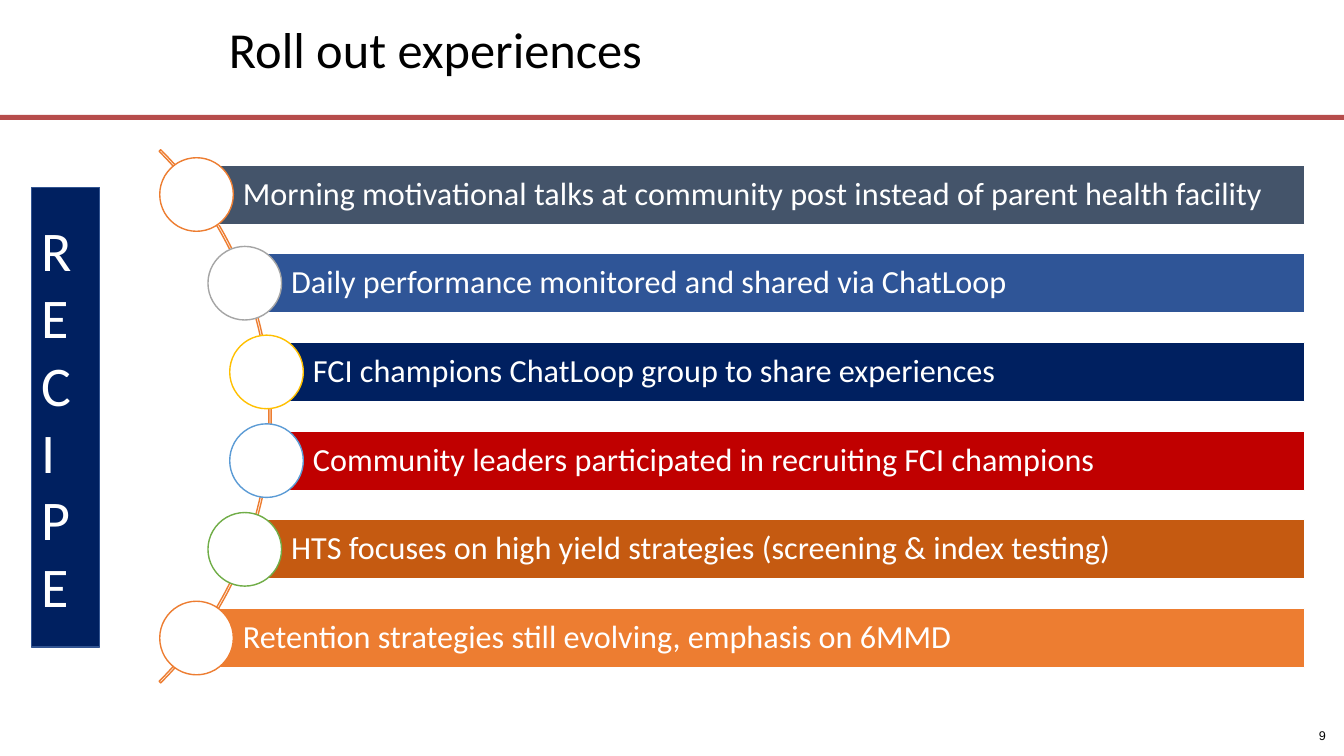
from dataclasses import dataclass
from math import sqrt

from pptx import Presentation
from pptx.dml.color import RGBColor
from pptx.enum.shapes import MSO_SHAPE
from pptx.enum.text import MSO_ANCHOR, PP_ALIGN
from pptx.util import Inches, Pt

TITLE = "Roll out experiences"
SIDE_WORD = "RECIPE"
PAGE_NUMBER = "9"
EXPERIENCES = [
    ("Morning motivational talks at community post instead of parent health facility", "44546A", "ED7D31"),
    ("Daily performance monitored and shared via ChatLoop", "2F5597", "A5A5A5"),
    ("FCI champions ChatLoop group to share experiences", "002060", "FFC000"),
    ("Community leaders participated in recruiting FCI champions", "C00000", "5B9BD5"),
    ("HTS focuses on high yield strategies (screening & index testing)", "C55A11", "70AD47"),
    ("Retention strategies still evolving, emphasis on 6MMD", "ED7D31", "ED7D31"),
]


@dataclass(frozen=True)
class Theme:
    white: str = "FFFFFF"
    black: str = "000000"
    page_text: str = "060606"
    rule: str = "B64C4B"
    arc: str = "ED7D31"
    navy: str = "002060"
    navy_edge: str = "325491"
    font: str = "Calibri"
    page_font: str = "Arial"
    title_size: int = 36
    side_size: int = 40
    bar_size: int = 23
    page_size: int = 9


THEME = Theme()
WIDTH, HEIGHT = 13.33, 7.5
ARC_X, ARC_Y, ARC_RADIUS = -1.05, 4.13, 3.74
CENTRE_RADIUS = 3.72
ROW_PITCH, BAR_HEIGHT, BAR_RIGHT, CIRCLE = 0.88, 0.59, 12.94, 0.73


def add_box(slide, preset, box, fill=None, line=None):
    shape = slide.shapes.add_shape(preset, *map(Inches, box))
    shape.shadow.inherit = False
    if fill:
        shape.fill.solid()
        shape.fill.fore_color.rgb = RGBColor.from_string(fill)
    else:
        shape.fill.background()
    if line:
        shape.line.color.rgb = RGBColor.from_string(line)
        shape.line.width = Pt(1)
    else:
        shape.line.fill.background()
    return shape


def write(shape, lines, size, color, font=THEME.font, align=PP_ALIGN.LEFT, spacing=1.0, **frame_format):
    frame = shape.text_frame
    frame.text = "\n".join(lines)
    for name, value in {"word_wrap": True, "vertical_anchor": MSO_ANCHOR.MIDDLE, **frame_format}.items():
        setattr(frame, name, value)
    for paragraph in frame.paragraphs:
        for name, value in {"alignment": align, "line_spacing": spacing, "space_before": Pt(0)}.items():
            setattr(paragraph, name, value)
        for name, value in {"name": font, "size": Pt(size), "bold": False}.items():
            setattr(paragraph.font, name, value)
        paragraph.font.color.rgb = RGBColor.from_string(color)


def add_experiences(slide):
    add_arc(slide)
    middle = (len(EXPERIENCES) - 1) / 2
    for row, (text, fill, ring) in enumerate(EXPERIENCES):
        offset = (row - middle) * ROW_PITCH
        x = ARC_X + sqrt(CENTRE_RADIUS**2 - offset**2)
        y = ARC_Y + offset
        bar = add_box(slide, MSO_SHAPE.RECTANGLE,
                      (x, y - BAR_HEIGHT / 2, BAR_RIGHT - x, BAR_HEIGHT), fill, THEME.white)
        write(bar, [text], THEME.bar_size, THEME.white, spacing=0.9,
              margin_left=Inches(0.46), margin_right=Inches(0.06),
              margin_top=Inches(0.06), margin_bottom=Inches(0.06))
        add_box(slide, MSO_SHAPE.OVAL,
                (x - CIRCLE / 2, y - CIRCLE / 2, CIRCLE, CIRCLE), THEME.white, ring)


def add_arc(slide):
    arc = add_box(slide, MSO_SHAPE.BLOCK_ARC,
                  (ARC_X - ARC_RADIUS, ARC_Y - ARC_RADIUS, 2 * ARC_RADIUS, 2 * ARC_RADIUS),
                  line=THEME.arc)
    for index, value in enumerate((189, 27, 0.003)):
        arc.adjustments[index] = value


def main():
    presentation = Presentation()
    presentation.slide_width, presentation.slide_height = Inches(WIDTH), Inches(HEIGHT)
    slide = presentation.slides.add_slide(presentation.slide_layouts[5])

    add_box(slide, MSO_SHAPE.RECTANGLE, (0, 1.14, WIDTH, 0.05), THEME.rule)
    page = slide.shapes.add_textbox(*map(Inches, (12.61, 7.1, 0.64, 0.4)))
    write(page, [PAGE_NUMBER], THEME.page_size, THEME.page_text, THEME.page_font, PP_ALIGN.RIGHT)

    add_experiences(slide)

    title = slide.shapes.title
    title.left, title.top, title.width, title.height = map(Inches, (2.17, 0.2, 10.85, 0.69))
    write(title, [TITLE], THEME.title_size, THEME.black, spacing=0.9, vertical_anchor=MSO_ANCHOR.TOP)

    side = add_box(slide, MSO_SHAPE.RECTANGLE, (0.31, 1.86, 0.68, 4.56), THEME.navy, THEME.navy_edge)
    write(side, SIDE_WORD, THEME.side_size, THEME.white)

    presentation.save("out.pptx")


if __name__ == "__main__":
    main()
